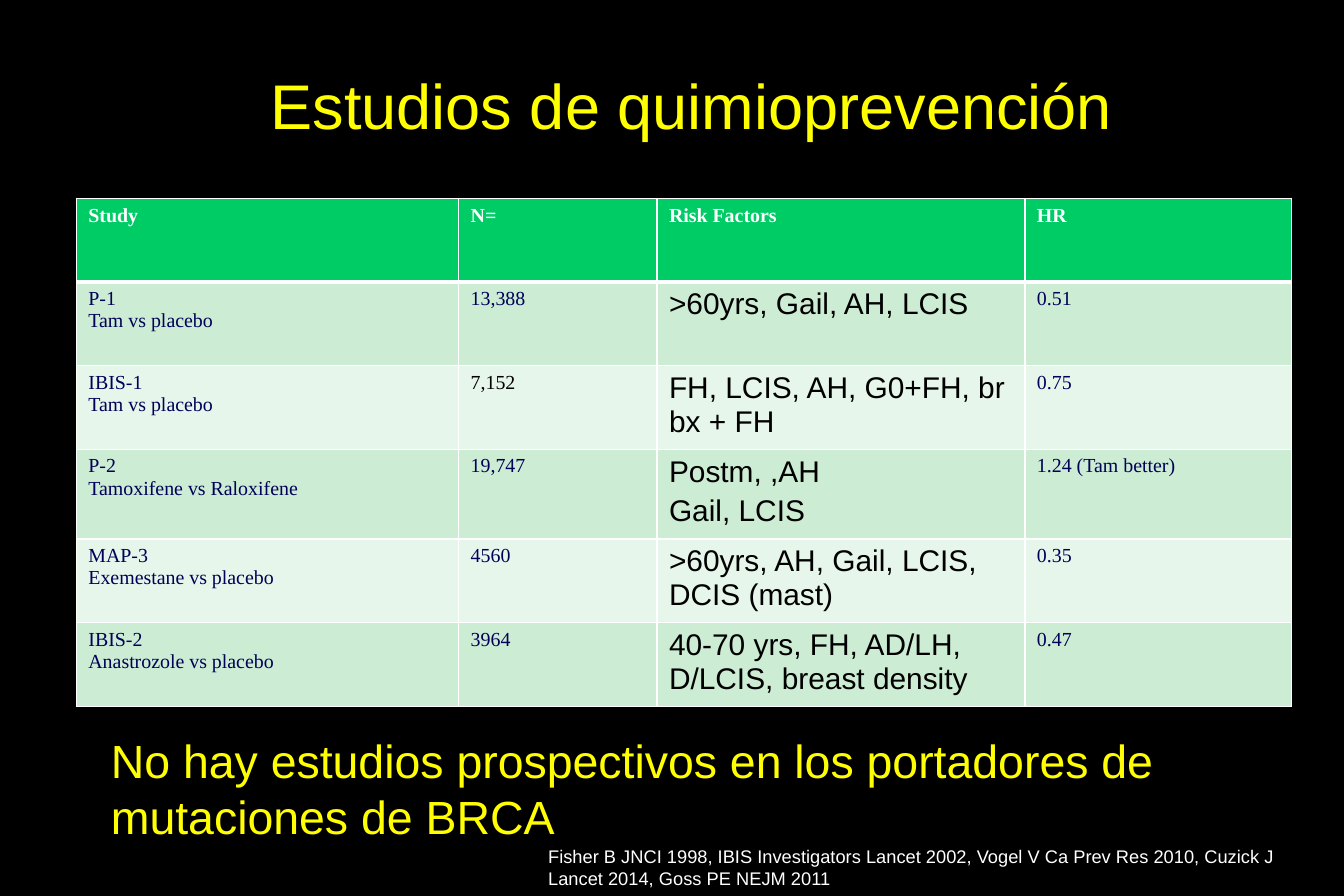
from lxml import etree
from pptx import Presentation
from pptx import util as u
from pptx.dml.color import RGBColor
from pptx.enum import text
from pptx.oxml import ns

BLACK = RGBColor(0x00, 0x00, 0x00)
WHITE = RGBColor(0xFF, 0xFF, 0xFF)
YELLOW = RGBColor(0xFF, 0xFF, 0x00)
NAVY = RGBColor(0x00, 0x00, 0x58)
GREEN = RGBColor(0x00, 0xCC, 0x66)
BANDS = (RGBColor(0xCC, 0xEC, 0xD3), RGBColor(0xE7, 0xF6, 0xEA))

WIDTH, HEIGHT = u.Inches(11.25), u.Inches(7.5)
COLUMN, ROW = WIDTH / 45, HEIGHT / 30

HEADER = ("Study", "N=", "Risk Factors", "HR")
STUDIES = [
    ("P-1\nTam vs placebo", "13,388", ">60yrs, Gail, AH, LCIS", "0.51"),
    ("IBIS-1\nTam vs placebo", "7,152", "FH, LCIS, AH, G0+FH, br bx + FH", "0.75"),
    ("P-2\nTamoxifene vs Raloxifene", "19,747", "Postm, ,AH\nGail, LCIS", "1.24 (Tam better)"),
    ("MAP-3\nExemestane vs placebo", "4560", ">60yrs, AH, Gail, LCIS, DCIS (mast)", "0.35"),
    ("IBIS-2\nAnastrozole vs placebo", "3964", "40-70 yrs, FH, AD/LH, D/LCIS, breast density", "0.47"),
]
TABLE_LEFT, TABLE_TOP, TABLE_ROW = 2.56, 6.64, 2.8
TABLE_COLUMNS = (12.8, 6.64, 12.32, 8.92)
RISK_COLUMN = HEADER.index("Risk Factors")
BLACK_CELL = "7,152"

HEADER_FONT = {"name": "Times New Roman", "size": u.Pt(12), "bold": True, "color": WHITE}
STUDY_FONT = {**HEADER_FONT, "bold": False, "color": NAVY}
RISK_FONT = {"name": "Arial", "size": u.Pt(18), "bold": False, "color": BLACK}

TEXTS = [
    ("Estudios de quimioprevención", (2.8, 0, 40.72, 5), 38, YELLOW,
     text.MSO_ANCHOR.BOTTOM, {"alignment": text.PP_ALIGN.CENTER, "line_spacing": 0.95}),
    ("Fisher B JNCI 1998, IBIS Investigators Lancet 2002, Vogel V Ca Prev Res 2010, "
     "Cuzick J Lancet 2014, Goss PE NEJM 2011",
     (17.96, 28.12, 26, 1.88), 11, WHITE, text.MSO_ANCHOR.TOP, {}),
    ("No hay estudios prospectivos en los portadores de mutaciones de BRCA",
     (3.32, 24.32, 41.68, 4.16), 28, YELLOW, text.MSO_ANCHOR.TOP, {}),
]


def place(left, top, width, height):
    return [round(value * unit) for value, unit in
            zip((left, top, width, height), (COLUMN, ROW, COLUMN, ROW))]


def set_font(font, values):
    for name, value in values.items():
        if name == "color":
            font.color.rgb = value
        else:
            setattr(font, name, value)


def add_text(slide, content, area, size, color, anchor, paragraph_format):
    frame = slide.shapes.add_textbox(*place(*area)).text_frame
    frame.word_wrap = True
    frame.vertical_anchor = anchor
    frame.text = content
    paragraph = frame.paragraphs[0]
    for name, value in paragraph_format.items():
        setattr(paragraph, name, value)
    set_font(paragraph.runs[0].font, {"name": "Arial", "size": u.Pt(size), "color": color})


def add_borders(cell, widths):
    properties = cell._tc.get_or_add_tcPr()
    for side, width in widths.items():
        line = etree.SubElement(properties, ns.qn(f"a:ln{side}"), w=str(u.Pt(width)))
        fill = etree.SubElement(line, ns.qn("a:solidFill"))
        etree.SubElement(fill, ns.qn("a:srgbClr"), val=str(WHITE))


def fill_cell(cell, content, row, column):
    add_borders(cell, {"L": 1, "R": 1, "T": 3 if row == 1 else 1, "B": 3 if row == 0 else 1})
    cell.fill.solid()
    cell.fill.fore_color.rgb = BANDS[(row - 1) % 2] if row else GREEN
    font = HEADER_FONT if row == 0 else RISK_FONT if column == RISK_COLUMN else STUDY_FONT
    if content == BLACK_CELL:
        font = {**font, "color": BLACK}
    cell.text = content
    for index, paragraph in enumerate(cell.text_frame.paragraphs):
        if index and column == RISK_COLUMN:
            paragraph.space_before = u.Pt(3.6)
        set_font(paragraph.runs[0].font, font)


def add_studies(slide):
    rows = [HEADER, *STUDIES]
    area = place(TABLE_LEFT, TABLE_TOP, sum(TABLE_COLUMNS), TABLE_ROW * len(rows))
    table = slide.shapes.add_table(len(rows), len(HEADER), *area).table
    for column, width in zip(table.columns, TABLE_COLUMNS):
        column.width = round(width * COLUMN)
    for row, contents in enumerate(rows):
        table.rows[row].height = round(TABLE_ROW * ROW)
        for column, content in enumerate(contents):
            fill_cell(table.cell(row, column), content, row, column)


def main():
    """Build the chemoprevention studies slide."""
    presentation = Presentation()
    presentation.slide_width, presentation.slide_height = WIDTH, HEIGHT
    slide = presentation.slides.add_slide(presentation.slide_layouts[6])
    slide.background.fill.solid()
    slide.background.fill.fore_color.rgb = BLACK
    title, *notes = TEXTS
    add_text(slide, *title)
    add_studies(slide)
    for note in notes:
        add_text(slide, *note)
    presentation.save("out.pptx")


if __name__ == "__main__":
    main()
